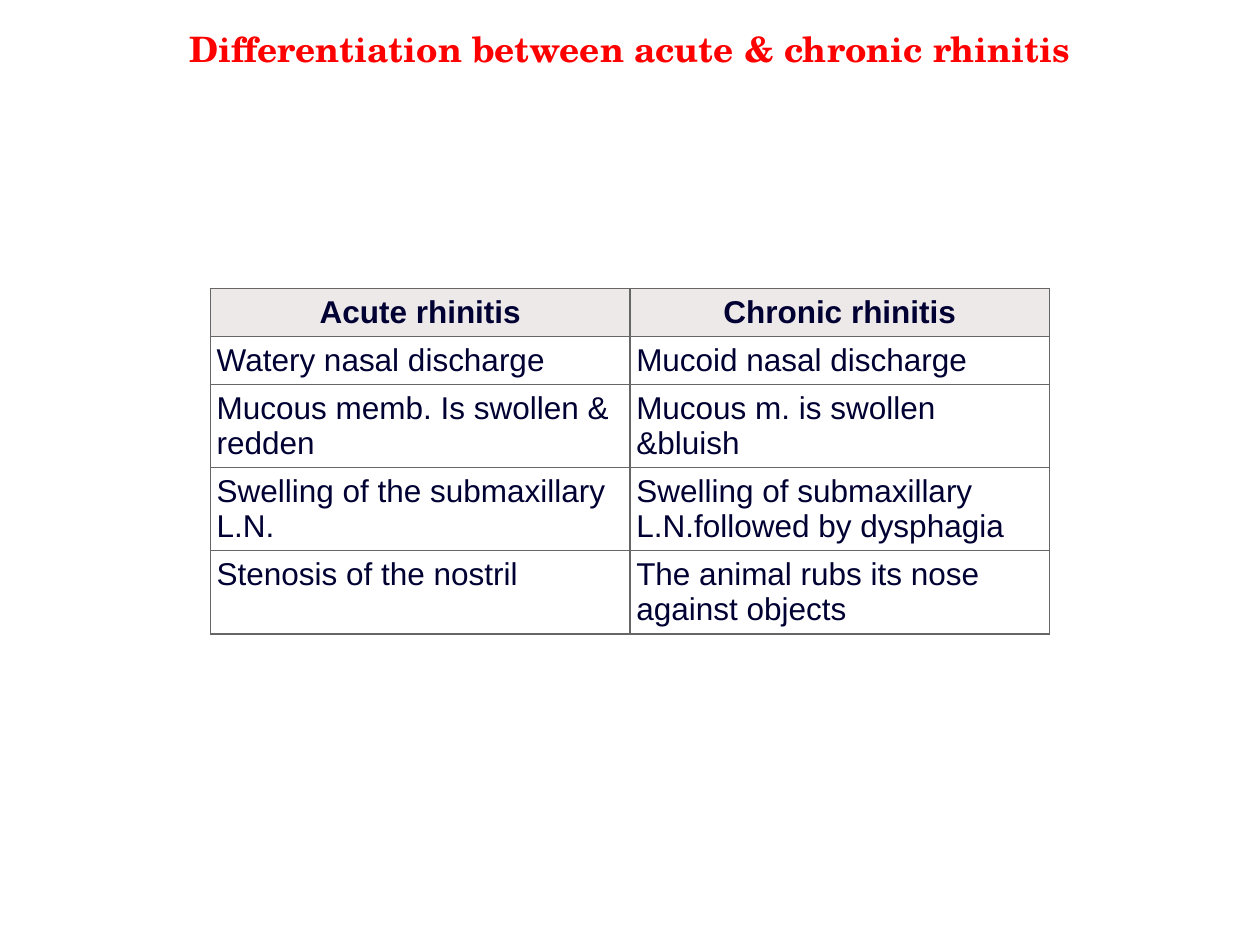
"""Build a slide comparing acute and chronic rhinitis in a table."""
from lxml import etree
from pptx import Presentation
from pptx.dml.color import RGBColor
from pptx.enum.shapes import MSO_SHAPE
from pptx.enum.text import MSO_ANCHOR, PP_ALIGN
from pptx.oxml import parse_xml
from pptx.oxml.ns import nsdecls
from pptx.util import Inches, Pt

RECTANGLE = MSO_SHAPE.RECTANGLE
TOP = MSO_ANCHOR.TOP
LEFT, CENTER = PP_ALIGN.LEFT, PP_ALIGN.CENTER

WHITE = RGBColor(0xFF, 0xFF, 0xFF)
RED = RGBColor(0xFF, 0x00, 0x00)
NAVY = RGBColor(0x00, 0x00, 0x33)
HEADER_GRAY = RGBColor(0xEE, 0xE9, 0xE9)
BORDER_GRAY = RGBColor(0x66, 0x66, 0x66)

SIGNS = [
    ("Acute rhinitis", "Chronic rhinitis"),
    ("Watery nasal discharge", "Mucoid nasal discharge"),
    ("Mucous memb. Is swollen & redden", "Mucous m. is swollen &bluish"),
    ("Swelling of the submaxillary L.N.",
     "Swelling of submaxillary L.N.followed by dysphagia"),
    ("Stenosis of the nostril", "The animal rubs its nose against objects"),
]
ROW_HEIGHTS = [0.38, 0.38, 0.66, 0.66, 0.66]


def write(frame, text, size=18, font="Arial", color=NAVY, bold=False, align=LEFT):
    frame.word_wrap = True
    paragraph = frame.paragraphs[0]
    paragraph.alignment = align
    run = paragraph.add_run()
    run.text = text
    run.font.size = Pt(size)
    run.font.name = font
    run.font.bold = bold
    run.font.color.rgb = color


def add_borders(cell):
    properties = cell._tc.get_or_add_tcPr()
    for position, side in enumerate(("lnL", "lnR", "lnT", "lnB")):
        border = parse_xml(f'<a:{side} {nsdecls("a")} w="{Pt(0.75)}"/>')
        fill = etree.SubElement(border, border.tag.replace(side, "solidFill"))
        color = etree.SubElement(fill, border.tag.replace(side, "srgbClr"))
        color.set("val", str(BORDER_GRAY))
        properties.insert(position, border)


presentation = Presentation()
presentation.slide_width = Inches(10)
presentation.slide_height = Inches(7.5)
slide = presentation.slides.add_slide(presentation.slide_layouts[6])

comparison = slide.shapes.add_table(
    len(SIGNS), 2, Inches(1.67), Inches(2.29), Inches(6.66), Inches(sum(ROW_HEIGHTS))
).table
comparison.first_row = False
comparison.horz_banding = False
for column in comparison.columns:
    column.width = Inches(3.33)

for row_index, (signs, height) in enumerate(zip(SIGNS, ROW_HEIGHTS)):
    comparison.rows[row_index].height = Inches(height)
    is_header = row_index == 0
    for column_index, sign in enumerate(signs):
        cell = comparison.cell(row_index, column_index)
        cell.margin_left = cell.margin_right = Inches(0.05)
        cell.margin_top = cell.margin_bottom = Inches(0.05)
        if is_header:
            cell.fill.solid()
            cell.fill.fore_color.rgb = HEADER_GRAY
        else:
            cell.fill.background()
        add_borders(cell)
        write(cell.text_frame, sign, bold=is_header, align=CENTER if is_header else LEFT)

title = slide.shapes.add_shape(RECTANGLE, Inches(0), Inches(0.17), Inches(10), Inches(0.74))
title.shadow.inherit = False
title.fill.solid()
title.fill.fore_color.rgb = WHITE
title.line.fill.background()
title.text_frame.vertical_anchor = TOP
write(title.text_frame, "Differentiation between acute & chronic rhinitis",
      size=20, font="TeX Gyre Schola", color=RED, bold=True, align=CENTER)

presentation.save("out.pptx")
